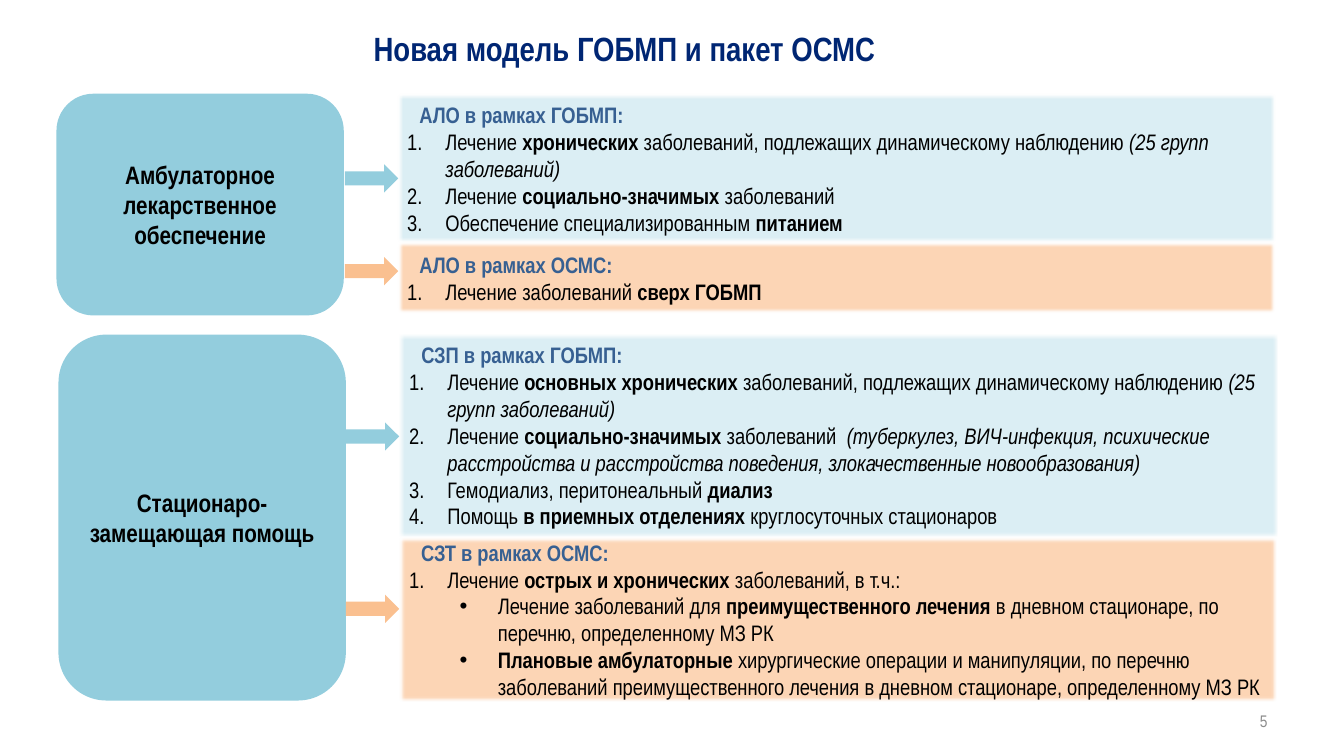
"""Build the slide on outpatient and day-hospital care packages."""
from lxml import etree
from pptx import Presentation
from pptx.dml.color import RGBColor
from pptx.enum.shapes import MSO_SHAPE
from pptx.enum.text import MSO_ANCHOR, MSO_AUTO_SIZE, PP_ALIGN
from pptx.oxml.ns import qn
from pptx.util import Inches, Pt

ROUNDED = MSO_SHAPE.ROUNDED_RECTANGLE
RECTANGLE = MSO_SHAPE.RECTANGLE
ARROW = MSO_SHAPE.RIGHT_ARROW
MIDDLE = MSO_ANCHOR.MIDDLE
NO_AUTOFIT = MSO_AUTO_SIZE.NONE
CENTER, LEFT, RIGHT = PP_ALIGN.CENTER, PP_ALIGN.LEFT, PP_ALIGN.RIGHT

FONT = "Arial Narrow"
BLUE, PALE_BLUE = "93CDDD", "DBEEF4"
ORANGE, PALE_ORANGE = "FAC090", "FCD5B5"
SOFT_EDGE = Inches(0.03)
INDENTS = {"heading": (0.12, 0), "number": (0.38, -0.38), "bullet": (0.88, -0.38)}


def color(hex_value):
    return RGBColor.from_string(hex_value)


def add_text(paragraph, text, size=16, fill="000000", bold=False, italic=False, align=LEFT):
    paragraph.alignment = align
    run = paragraph.add_run()
    run.text = text
    run.font.name = FONT
    run.font.size = Pt(size)
    run.font.bold = bold
    run.font.italic = italic
    run.font.color.rgb = color(fill)


sections = [
    {
        "label": "Амбулаторное лекарственное обеспечение",
        "box": (0.56, 0.93, 2.85, 2.2),
        "arrow_left": 3.42,
        "panels": [
            ((3.94, 0.93, 8.71, 1.48), PALE_BLUE, 1.63, BLUE, [
                ("heading", [("АЛО в рамках ГОБМП:", "b")]),
                ("number", [("Лечение ", ""), ("хронических ", "b"),
                            ("заболеваний, подлежащих динамическому наблюдению ", ""),
                            ("(25 групп заболеваний)", "i")]),
                ("number", [("Лечение ", ""), ("социально-значимых", "b"), (" заболеваний", "")]),
                ("number", [("Обеспечение специализированным ", ""), ("питанием", "b")]),
            ]),
            ((3.94, 2.4, 8.71, 0.71), PALE_ORANGE, 2.55, ORANGE, [
                ("heading", [("АЛО в рамках ОСМС:", "b")]),
                ("number", [("Лечение заболеваний ", ""), ("сверх ГОБМП", "b")]),
            ]),
        ],
    },
    {
        "label": "Стационаро-замещающая помощь",
        "box": (0.58, 3.32, 2.85, 3.63),
        "arrow_left": 3.43,
        "panels": [
            ((3.96, 3.32, 8.71, 2), PALE_BLUE, 4.19, BLUE, [
                ("heading", [("СЗП в рамках ГОБМП:", "b")]),
                ("number", [("Лечение ", ""), ("основных хронических", "b"),
                            (" заболеваний, подлежащих динамическому наблюдению ", ""),
                            ("(25 групп заболеваний)", "i")]),
                ("number", [("Лечение ", ""), ("социально-значимых", "b"), (" заболеваний  ", ""),
                            ("(туберкулез, ВИЧ-инфекция, психические расстройства и расстройства "
                             "поведения, злокачественные новообразования)", "i")]),
                ("number", [("Гемодиализ, перитонеальный ", ""), ("диализ", "b")]),
                ("number", [("Помощь ", ""), ("в приемных отделениях ", "b"),
                            ("круглосуточных стационаров", "")]),
            ]),
            ((3.96, 5.33, 8.7, 1.63), PALE_ORANGE, 5.9, ORANGE, [
                ("heading", [("СЗТ в рамках ОСМС:", "b")]),
                ("number", [("Лечение ", ""), ("острых и хронических ", "b"),
                            ("заболеваний, в т.ч.:", "")]),
                ("bullet", [("Лечение заболеваний для ", ""), ("преимущественного лечения ", "b"),
                            ("в дневном стационаре, по перечню, определенному МЗ РК", "")]),
                ("bullet", [("Плановые амбулаторные ", "b"),
                            ("хирургические операции и манипуляции, по перечню заболеваний "
                             "преимущественного лечения в дневном стационаре, "
                             "определенному МЗ РК", "")]),
            ]),
        ],
    },
]

presentation = Presentation()
presentation.slide_width = Inches(13.33)
presentation.slide_height = Inches(7.5)
slide = presentation.slides.add_slide(presentation.slide_layouts[5])

title = slide.shapes.title
title.left, title.top, title.width, title.height = map(Inches, (0.45, 0.22, 11.41, 0.52))
title.text_frame.auto_size = NO_AUTOFIT
title.text_frame.vertical_anchor = MIDDLE
add_text(title.text_frame.paragraphs[0], " Новая модель ГОБМП и пакет ОСМС",
         size=24, fill="002673", bold=True, align=CENTER)

page_number = slide.shapes.add_textbox(*map(Inches, (9.56, 6.95, 3.11, 0.4)))
page_number.text_frame.word_wrap = True
page_number.text_frame.vertical_anchor = MIDDLE
add_text(page_number.text_frame.paragraphs[0], "5", size=12, fill="8C8C8C", align=RIGHT)

for section in sections:
    parts = [(ROUNDED, section["box"], BLUE, [("label", [(section["label"], "b")])])]
    for bounds, panel_fill, arrow_top, arrow_fill, content in section["panels"]:
        parts.append((ARROW, (section["arrow_left"], arrow_top, 0.53, 0.28), arrow_fill, []))
        parts.append((RECTANGLE, bounds, panel_fill, content))

    for geometry, bounds, fill, content in parts:
        shape = slide.shapes.add_shape(geometry, *map(Inches, bounds))
        shape.fill.solid()
        shape.fill.fore_color.rgb = color(fill)
        shape.line.fill.background()
        shape.shadow.inherit = False
        if geometry == RECTANGLE:
            effects = shape.element.spPr.find(qn("a:effectLst"))
            etree.SubElement(effects, qn("a:softEdge"), rad=str(SOFT_EDGE))
        frame = shape.text_frame
        frame.word_wrap = True
        frame.vertical_anchor = MIDDLE

        for index, (role, runs) in enumerate(content):
            paragraph = frame.add_paragraph() if index else frame.paragraphs[0]
            for text, style in runs:
                add_text(paragraph, text,
                         size=18 if role == "label" else 16,
                         fill="376092" if role == "heading" else "000000",
                         bold=style == "b", italic=style == "i",
                         align=CENTER if role == "label" else LEFT)
            if role == "label":
                continue
            margin, indent = INDENTS[role]
            properties = paragraph._p.get_or_add_pPr()
            properties.set("marL", str(Inches(margin)))
            properties.set("indent", str(Inches(indent)))
            if role == "number":
                etree.SubElement(properties, qn("a:buFont"), typeface=FONT)
                etree.SubElement(properties, qn("a:buAutoNum"), type="arabicPeriod")
            elif role == "bullet":
                properties.set("lvl", "1")
                etree.SubElement(properties, qn("a:buFont"), typeface="Arial")
                etree.SubElement(properties, qn("a:buChar"), char="•")

presentation.save("out.pptx")
